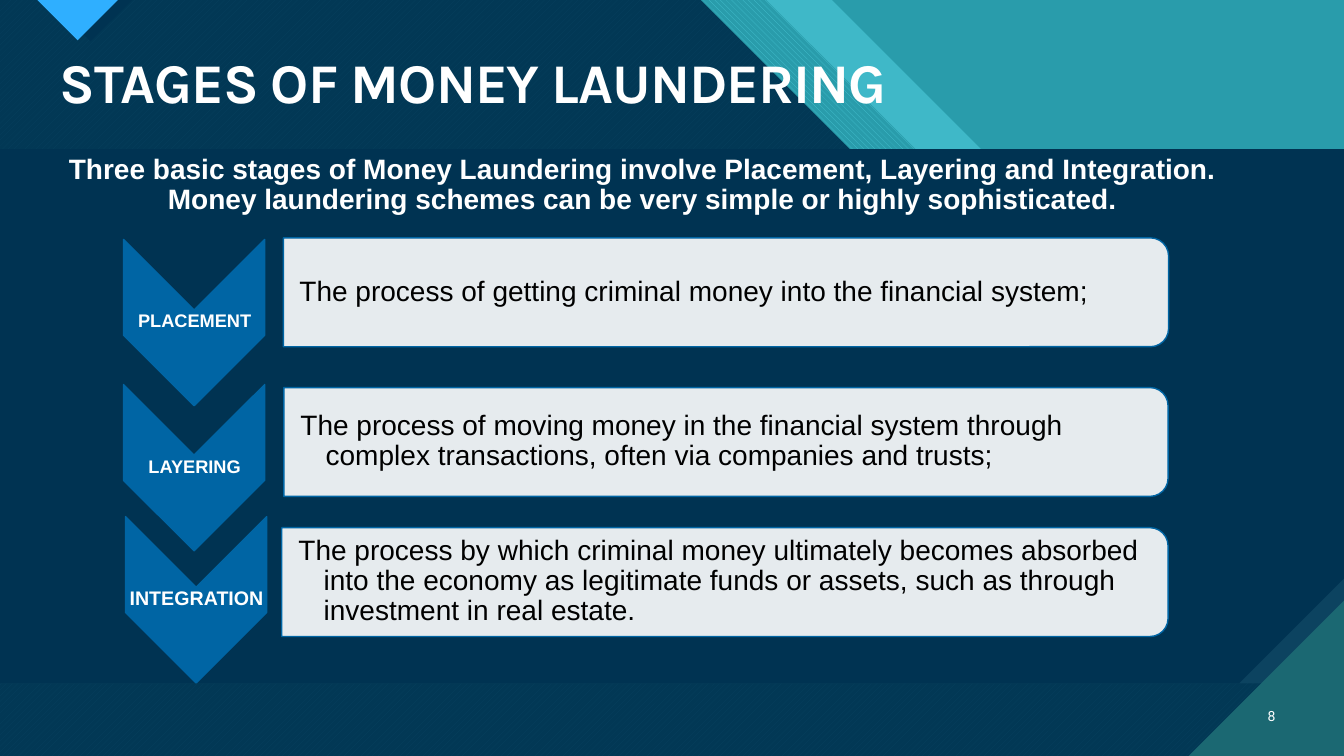
"""Build the slide on the three stages of money laundering."""
from dataclasses import dataclass

from lxml.etree import SubElement
from pptx import Presentation
from pptx.dml.color import RGBColor as RGB
from pptx.enum.dml import MSO_PATTERN as Pattern
from pptx.enum.shapes import MSO_SHAPE as Shape
from pptx.enum.text import MSO_ANCHOR as Anchor, MSO_AUTO_SIZE as AutoSize, PP_ALIGN as Align
from pptx.oxml.ns import qn
from pptx.shapes.autoshape import Shape as AutoShape
from pptx.slide import Slide
from pptx.text.text import TextFrame
from pptx.util import Pt

PX = 9144
WIDTH, HEIGHT = 1333, 750
PANEL_TOP, PANEL_HEIGHT = 148, 530
CHEVRON_W, CHEVRON_H = 140, 165
CARD_RIGHT, CARD_H = 1159, 108
INDENT = 25


@dataclass(frozen=True)
class Theme:
    navy: str = "003352"
    navy_light: str = "0C4360"
    teal: str = "299CAB"
    aqua: str = "47C3D3"
    pine: str = "1B6872"
    sky: str = "2FAFFF"
    blue: str = "0065A4"
    white: str = "FFFFFF"
    black: str = "000000"
    title_font: str = "Karla"
    body_font: str = "Arial"
    number_font: str = "Roboto"
    title_size: int = 40
    body_size: int = 20
    label_size: int = 13
    wide_label_size: int = 14
    number_size: int = 10


T = Theme()


@dataclass(frozen=True)
class Band:
    edge: int
    color: str
    alpha: int = 100
    pattern: Pattern | None = None
    back: str = T.teal


@dataclass(frozen=True)
class Triangle:
    points: tuple[tuple[int, int], ...]
    color: str


@dataclass(frozen=True)
class Stage:
    label: str
    label_size: int
    text: str
    chevron_left: int
    chevron_top: int
    card_left: int
    card_top: int


BANDS = (
    Band(825, T.aqua, alpha=74),
    Band(760, T.aqua, pattern=Pattern.WIDE_DOWNWARD_DIAGONAL),
    Band(695, T.aqua, pattern=Pattern.WIDE_UPWARD_DIAGONAL, back=T.pine),
    Band(695, T.navy, alpha=90),
)
TRIANGLES = (
    Triangle(((48, 0), (90, 41), (131, 0)), T.navy),
    Triangle(((37, 0), (77, 40), (117, 0)), T.sky),
    Triangle(((1179, 750), (1333, 750), (1333, 596)), T.pine),
)
STAGES = (
    Stage("PLACEMENT", T.label_size,
          "The process of getting criminal money into the financial system;",
          123, 237, 281, 236),
    Stage("LAYERING", T.label_size,
          "The process of moving money in the financial system through complex "
          "transactions, often via companies and trusts;",
          123, 381, 282, 384),
    Stage("INTEGRATION ", T.wide_label_size,
          "The process by which criminal money ultimately becomes absorbed into the "
          "economy as legitimate funds or assets, such as through investment in real estate.",
          125, 512, 280, 523),
)


def paint(sp: AutoShape, color: str, alpha: int = 100, line: str | None = None) -> None:
    sp.shadow.inherit = False
    sp.fill.solid()
    sp.fill.fore_color.rgb = RGB.from_string(color)
    if alpha < 100:
        srgb = sp._element.spPr.find(qn("a:solidFill"))[0]
        SubElement(srgb, qn("a:alpha"), val=str(alpha * 1000))
    if line:
        sp.line.color.rgb = RGB.from_string(line)
        sp.line.width = Pt(1)
    else:
        sp.line.fill.background()


def add_polygon(s: Slide, points: tuple[tuple[int, int], ...]) -> AutoShape:
    builder = s.shapes.build_freeform(*points[0], scale=PX)
    builder.add_line_segments(points[1:], close=True)
    return builder.convert_to_shape()


def add_band(s: Slide, band: Band) -> None:
    sp = add_polygon(s, ((0, 0), (band.edge, 0), (WIDTH, WIDTH - band.edge),
                         (WIDTH, HEIGHT), (0, HEIGHT)))
    paint(sp, band.color, band.alpha)
    if band.pattern is not None:
        sp.fill.patterned()
        sp.fill.pattern = band.pattern
        sp.fill.fore_color.rgb = RGB.from_string(band.color)
        sp.fill.back_color.rgb = RGB.from_string(band.back)


def add_preset(s: Slide, kind: Shape, x: int, y: int, w: int, h: int) -> AutoShape:
    return s.shapes.add_shape(kind, x * PX, y * PX, w * PX, h * PX)


def add_turned(s: Slide, kind: Shape, x: int, y: int, w: int, h: int) -> AutoShape:
    shift = (w - h) // 2
    sp = add_preset(s, kind, x + shift, y - shift, h, w)
    sp.rotation = 90
    return sp


def write(tf: TextFrame, text: str, size: int, color: str, font: str = T.body_font,
          bold: bool = False, align: Align = Align.LEFT,
          anchor: Anchor = Anchor.MIDDLE) -> None:
    tf.text = text
    tf.word_wrap = True
    tf.auto_size = AutoSize.NONE
    tf.vertical_anchor = anchor
    p = tf.paragraphs[0]
    p.alignment = align
    p.line_spacing = 0.9
    r = p.runs[0]
    r.font.name = font
    r.font.size = Pt(size)
    r.font.bold = bold
    r.font.color.rgb = RGB.from_string(color)


def add_text(s: Slide, x: int, y: int, w: int, h: int,
             insets: tuple[int, int, int, int] = (10, 5, 10, 5)) -> TextFrame:
    tf = s.shapes.add_textbox(x * PX, y * PX, w * PX, h * PX).text_frame
    tf.margin_left, tf.margin_top, tf.margin_right, tf.margin_bottom = (i * PX for i in insets)
    return tf


def add_stage(s: Slide, stage: Stage) -> None:
    x, y = stage.chevron_left, stage.chevron_top
    paint(add_turned(s, Shape.CHEVRON, x, y, CHEVRON_W, CHEVRON_H), T.blue, line=T.blue)
    write(add_text(s, x, y + CHEVRON_W // 2, CHEVRON_W, 25, (1, 1, 1, 1)),
          stage.label, stage.label_size, T.white, bold=True, align=Align.CENTER)
    card = (stage.card_left, stage.card_top, CARD_RIGHT - stage.card_left, CARD_H)
    paint(add_turned(s, Shape.ROUND_2_SAME_RECTANGLE, *card), T.white, 90, T.blue)
    tf = add_text(s, *card, (16, 1, 6, 1))
    write(tf, stage.text, T.body_size, T.black)
    pPr = tf.paragraphs[0]._p.get_or_add_pPr()
    pPr.set("marL", str(INDENT * PX))
    pPr.set("indent", str(-INDENT * PX))


def add_backdrop(s: Slide) -> None:
    s.background.fill.solid()
    s.background.fill.fore_color.rgb = RGB.from_string(T.teal)
    for band in BANDS:
        add_band(s, band)
    panel = (0, PANEL_TOP, WIDTH, PANEL_HEIGHT)
    paint(add_preset(s, Shape.RECTANGLE, *panel), T.navy_light)
    bottom, snip = PANEL_TOP + PANEL_HEIGHT, 104
    paint(add_polygon(s, ((0, PANEL_TOP), (WIDTH, PANEL_TOP), (WIDTH, bottom - snip),
                          (WIDTH - snip, bottom), (0, bottom))), T.navy)
    for triangle in TRIANGLES:
        paint(add_polygon(s, triangle.points), triangle.color)


def main() -> None:
    prs = Presentation()
    prs.slide_width, prs.slide_height = WIDTH * PX, HEIGHT * PX
    s = prs.slides.add_slide(prs.slide_layouts[5])
    add_backdrop(s)
    title = s.shapes.title
    title.left, title.top, title.width, title.height = (v * PX for v in (49, 49, 1226, 71))
    write(title.text_frame, "STAGES OF MONEY LAUNDERING", T.title_size, T.white,
          T.title_font, bold=True)
    title.text_frame.paragraphs[0].runs[0].font._element.set("spc", "-70")
    s.shapes._spTree.append(title._element)
    write(add_text(s, 31, 149, 1213, 75),
          "Three basic stages of Money Laundering involve Placement, Layering and Integration. "
          "Money laundering schemes can be very simple or highly sophisticated.",
          T.body_size, T.white, bold=True, align=Align.CENTER, anchor=Anchor.TOP)
    for stage in STAGES:
        add_stage(s, stage)
    write(add_text(s, 1231, 691, 44, 40), "8", T.number_size, T.white, T.number_font,
          align=Align.RIGHT)
    prs.save("out.pptx")


if __name__ == "__main__":
    main()
